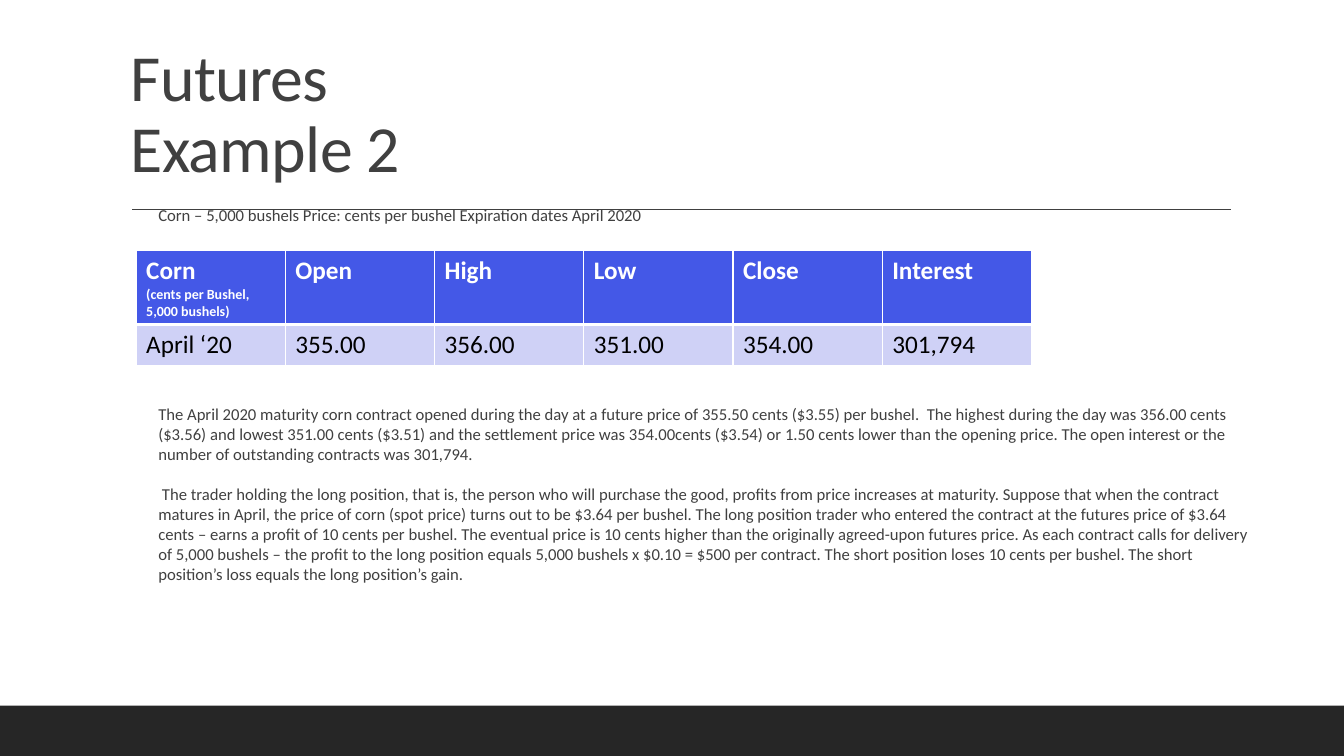
from pptx import Presentation
from pptx import util as u
from pptx.dml.color import RGBColor
from pptx.enum import shapes, text
from pptx.oxml import parse_xml
from pptx.oxml.ns import nsdecls


def rgb(code):
    return RGBColor.from_string(code)


class Deck:
    """Slide builder with one shared style."""

    font, ink, dark = "Calibri", "404040", "262626"
    head, band, white = "4458E7", "CFD1F6", "FFFFFF"

    def __init__(self):
        self.prs = Presentation()
        self.prs.slide_width = u.Inches(13.33)
        self.prs.slide_height = u.Inches(7.5)
        self.slide = self.prs.slides.add_slide(self.prs.slide_layouts[6])

    def style(self, para, size, color, bold=False):
        for run in para.runs:
            run.font.name = self.font
            run.font.size = u.Pt(size)
            run.font.bold = bold
            run.font.color.rgb = rgb(color)

    def bar(self, *box):
        bar = self.slide.shapes.add_shape(
            shapes.MSO_SHAPE.RECTANGLE, *map(u.Inches, box))
        bar.shadow.inherit = False
        bar.fill.solid()
        bar.fill.fore_color.rgb = rgb(self.dark)
        bar.line.fill.background()

    def rule(self, *ends):
        line = self.slide.shapes.add_connector(
            shapes.MSO_CONNECTOR.STRAIGHT, *map(u.Inches, ends))
        line.line.color.rgb = rgb(self.ink)
        line.line.width = u.Pt(1)
        line._element.spPr.append(
            parse_xml(f"<a:effectLst {nsdecls('a')}/>"))

    def frame(self, box, words):
        frame = self.slide.shapes.add_textbox(*map(u.Inches, box)).text_frame
        frame.word_wrap = True
        frame.text = words
        return frame

    def title(self, box, words):
        frame = self.frame(box, words)
        frame.vertical_anchor = text.MSO_ANCHOR.BOTTOM
        para = frame.paragraphs[0]
        para.line_spacing = 0.9
        self.style(para, 47, self.ink)
        for run in para.runs:
            run._r.get_or_add_rPr().set("spc", "-50")

    def body(self, box, *parts):
        frame = self.frame(box, "\n".join(parts))
        frame.margin_left = frame.margin_right = 0
        for para in frame.paragraphs:
            para.space_before = u.Pt(12)
            para.space_after = u.Pt(2)
            self.style(para, 11.9, self.ink)

    def edges(self, cell, top, bottom):
        props = cell._tc.get_or_add_tcPr()
        for side, width in zip("LRTB", (1, 1, top, bottom)):
            props.append(parse_xml(
                f'<a:ln{side} {nsdecls("a")} w="{u.Pt(width)}"><a:solidFill>'
                f'<a:srgbClr val="{self.white}"/></a:solidFill></a:ln{side}>'))

    def table(self, left, top, width, highs, rows):
        grid = self.slide.shapes.add_table(
            len(rows), len(rows[0]), u.Inches(left), u.Inches(top),
            u.Inches(width * len(rows[0])), u.Inches(sum(highs))).table
        grid.horz_banding = False
        for col in grid.columns:
            col.width = u.Inches(width)
        for r, row in enumerate(rows):
            grid.rows[r].height = u.Inches(highs[r])
            first = r == 0
            for c, words in enumerate(row):
                cell = grid.cell(r, c)
                self.edges(cell, 1 if first else 3, 3 if first else 1)
                cell.fill.solid()
                cell.fill.fore_color.rgb = rgb(
                    self.head if first else self.band)
                cell.text_frame.text = words
                for n, para in enumerate(cell.text_frame.paragraphs):
                    self.style(para, 10 if n else 18,
                               self.white if first else "000000", first)


def main():
    deck = Deck()
    deck.bar(0, 7, 13.33, 0.5)
    deck.rule(1.31, 2.08, 12.21, 2.08)
    deck.title((1.2, 0.31, 11, 1.59), "Futures\vExample 2")
    deck.body((1.57, 1.98, 10.9, 0.3),
              "Corn – 5,000 bushels Price: cents per bushel "
              "Expiration dates April 2020")
    day = (
        "The April 2020 maturity corn contract opened during the day at a "
        "future price of 355.50 cents ($3.55) per bushel.  The highest during "
        "the day was 356.00 cents ($3.56) and lowest 351.00 cents ($3.51) and "
        "the settlement price was 354.00cents ($3.54) or 1.50 cents lower than "
        "the opening price. The open interest or the number of outstanding "
        "contracts was 301,794.")
    trade = (
        " The trader holding the long position, that is, the person who will "
        "purchase the good, profits from price increases at maturity. Suppose "
        "that when the contract matures in April, the price of corn (spot "
        "price) turns out to be $3.64 per bushel. The long position trader who "
        "entered the contract at the futures price of $3.64 cents – earns a "
        "profit of 10 cents per bushel.")
    result = (
        "The eventual price is 10 cents higher "
        "than the originally agreed-upon futures price. As each contract calls "
        "for delivery of 5,000 bushels – the profit to the long position "
        "equals 5,000 bushels x $0.10 = $500 per contract. The short position "
        "loses 10 cents per bushel. The short position’s loss equals the long "
        "position’s gain.")
    deck.body((1.57, 3.96, 10.9, 2.3), day, " ".join((trade, result)))
    deck.table(1.35, 2.48, 1.48, (0.74, 0.41), (
        ("Corn\n(cents per Bushel, 5,000 bushels)", "Open", "High", "Low",
         "Close", "Interest"),
        ("April ‘20", "355.00", "356.00", "351.00", "354.00", "301,794")))
    deck.prs.save("out.pptx")


if __name__ == "__main__":
    main()
